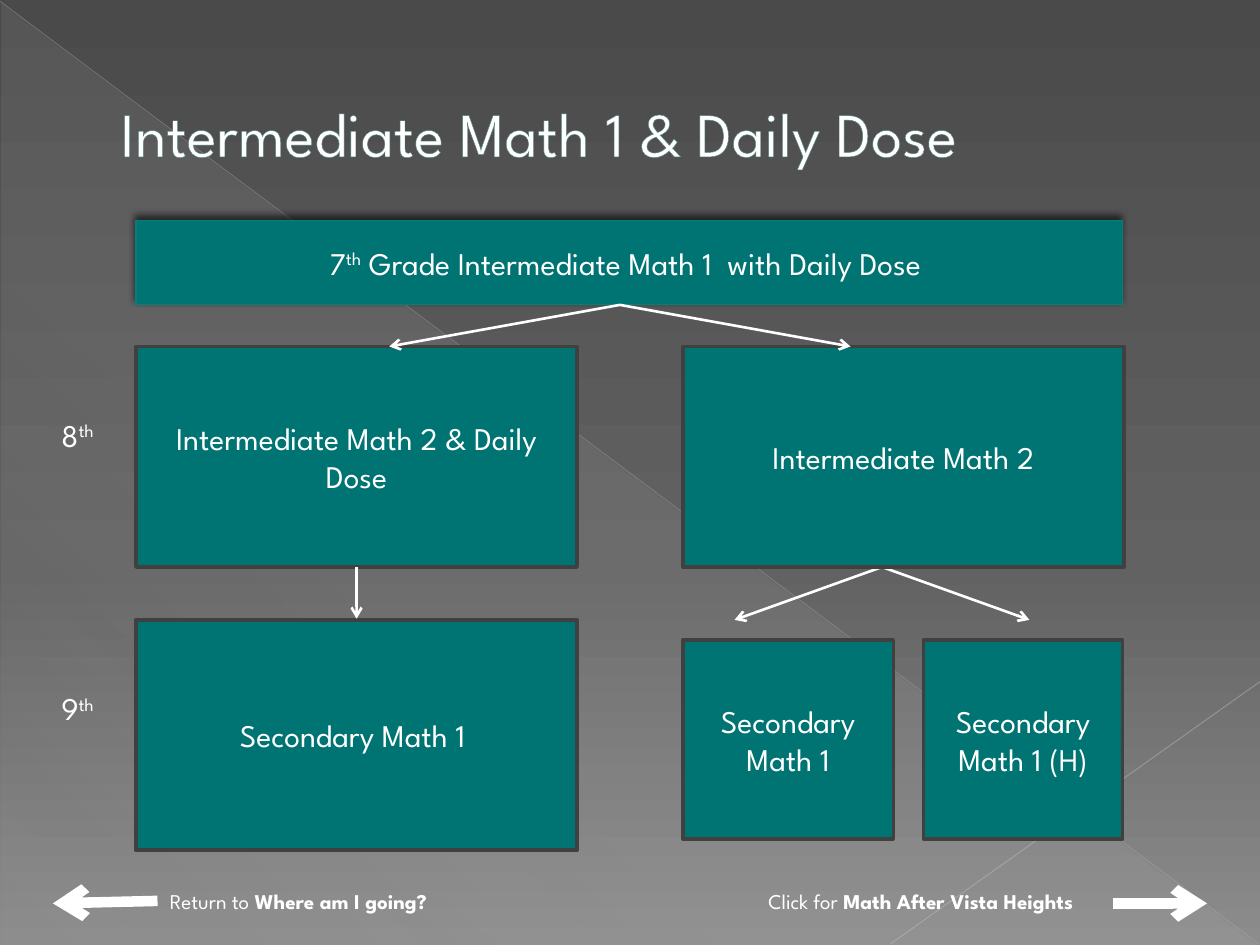
from lxml import etree
from pptx import Presentation
from pptx.dml.color import RGBColor
from pptx.enum.shapes import MSO_CONNECTOR, MSO_SHAPE
from pptx.enum.text import MSO_ANCHOR, MSO_AUTO_SIZE, PP_ALIGN
from pptx.oxml.ns import qn
from pptx.util import Inches, Pt

RECT = MSO_SHAPE.RECTANGLE
WEDGE = MSO_SHAPE.RIGHT_TRIANGLE
STRAIGHT = MSO_CONNECTOR.STRAIGHT
MIDDLE = MSO_ANCHOR.MIDDLE
GROW = MSO_AUTO_SIZE.SHAPE_TO_FIT_TEXT
LEFT, CENTER = PP_ALIGN.LEFT, PP_ALIGN.CENTER
FONT = "League Spartan"
WHITE, TEAL, GREY = "FFFFFF", "007373", "404040"
COL1, COL2, WIDE = 1.08, 5.42, 3.5
ROW8, ROW9 = 2.75, 5.08


def color(code):
    """Turn a hex string into a colour."""
    return RGBColor.from_string(code)


def child(parent, tag, **attrs):
    """Append a drawing element with the given attributes."""
    node = etree.SubElement(parent, qn(tag))
    for key, value in attrs.items():
        node.set(key, str(value))
    return node


def tint(parent, code, alpha):
    """Append a colour with its opacity in percent."""
    node = child(parent, "a:srgbClr", val=code)
    child(node, "a:alpha", val=alpha * 1000)


def blend(fill, root, stops, angle):
    """Give a fill a linear gradient of (place, colour, opacity) stops."""
    fill.gradient()
    grad = root.find(".//" + qn("a:gradFill"))
    items = grad.find(qn("a:gsLst"))
    for item in list(items):
        items.remove(item)
    for place, code, alpha in stops:
        tint(child(items, "a:gs", pos=place * 1000), code, alpha)
    grad.find(qn("a:lin")).set("ang", str(angle * 60000))


def write(shape, runs, size=18, align=CENTER):
    """Write one paragraph of (text, style) runs into a shape."""
    frame = shape.text_frame
    frame.word_wrap = True
    para = frame.paragraphs[0]
    para.alignment = align
    font = para.font
    font.name, font.size = FONT, Pt(size)
    font.color.rgb = color(WHITE)
    for text, style in runs:
        run = para.add_run()
        run.text = text
        if style == "bold":
            run.font.bold = True
        elif style == "super":
            run.font._element.set("baseline", "30000")
    return para


def box(slide, x, y, w, h, runs, edge=GREY, width=2):
    """Add a teal course box."""
    shape = slide.shapes.add_shape(RECT, Inches(x), Inches(y), Inches(w), Inches(h))
    shape.shadow.inherit = False
    shape.fill.solid()
    shape.fill.fore_color.rgb = color(TEAL)
    shape.line.color.rgb = color(edge)
    shape.line.width = Pt(width)
    shape.text_frame.vertical_anchor = MIDDLE
    write(shape, runs)
    return shape


def shade(shape):
    """Cast a soft shadow up and to the left."""
    effects = shape._element.spPr.find(qn("a:effectLst"))
    cast = child(effects, "a:outerShdw", blurRad=Pt(4), dist=Pt(3),
                 dir=245 * 60000, rotWithShape=0)
    tint(cast, "000000", 60)


def note(slide, x, y, w, h, runs, size=18, align=CENTER):
    """Add a text box that grows with its text."""
    shape = slide.shapes.add_textbox(Inches(x), Inches(y), Inches(w), Inches(h))
    write(shape, runs, size, align)
    shape.text_frame.auto_size = GROW


def line(slide, start, end, code=WHITE, width=1.5, alpha=100):
    """Add a straight line without a shadow."""
    x, y = start
    to_x, to_y = end
    link = slide.shapes.add_connector(
        STRAIGHT, Inches(x), Inches(y), Inches(to_x), Inches(to_y))
    link.line.color.rgb = color(code)
    link.line.width = Pt(width)
    props = link._element.spPr
    if alpha < 100:
        tone = props.find(".//" + qn("a:srgbClr"))
        child(tone, "a:alpha", val=alpha * 1000)
    child(props, "a:effectLst")
    return link


def arrow(slide, start, end, width=1.5):
    """Add a white line with an open arrowhead at its end."""
    link = line(slide, start, end, width=width)
    child(link._element.spPr.find(qn("a:ln")), "a:tailEnd", type="arrow")


def fork(slide, x, y, reach, drop):
    """Add two arrows that part from one point."""
    for side in (-1, 1):
        arrow(slide, (x, y), (x + side * reach, y + drop))


def scene(slide):
    """Paint the grey backdrop with its wedge and thin rays."""
    blend(slide.background.fill, slide._element,
          [(0, "4A4A4A", 100), (60, "626262", 100), (100, "8C8C8C", 100)], 90)
    wedge = slide.shapes.add_shape(
        WEDGE, Inches(0.01), Inches(0.02), Inches(9.98), Inches(7.48))
    wedge.shadow.inherit = False
    wedge.line.fill.background()
    blend(wedge.fill, wedge._element,
          [(0, "D2D2D2", 10), (70, "D2D2D2", 8), (100, "D2D2D2", 1)], 133)
    line(slide, (0, 0.01), (9.99, 7.49), "BFBFBF", 0.39, 35)
    line(slide, (10, 5.41), (7.07, 7.49), "C6C6C6", 0.47, 45)


def title(slide, text):
    """Add the outlined slide title."""
    shape = slide.shapes.add_textbox(
        Inches(0.33), Inches(0.67), Inches(9.33), Inches(0.83))
    shape.text_frame.vertical_anchor = MIDDLE
    para = write(shape, [(text, "")], 35.7, LEFT)
    para.line_spacing = 0.9
    para._p.pPr.set("marL", str(Inches(0.53)))
    edge = etree.Element(qn("a:ln"), w=str(Pt(0.5)))
    tint(child(edge, "a:solidFill"), "528681", 100)
    para.font._element.insert(0, edge)


def main():
    """Build the course pathway slide."""
    deck = Presentation()
    deck.slide_width, deck.slide_height = Inches(10), Inches(7.5)
    slide = deck.slides.add_slide(deck.slide_layouts[6])
    scene(slide)
    title(slide, "Intermediate Math 1 & Daily Dose")

    fork(slide, 7, 4.5, 1.17, 0.42)
    top = box(slide, COL1, 1.75, 7.83, 0.67,
              [("7", ""), ("th", "super"),
               (" Grade Intermediate Math 1  with Daily Dose ", "")], "087E7B", 0.75)
    shade(top)
    for x, y, w, h, text, width in (
            (COL1, ROW8, WIDE, 1.75, "Intermediate Math 2 & Daily Dose", 2),
            (COL2, ROW8, WIDE, 1.75, "Intermediate Math 2", 2),
            (COL1, 4.92, WIDE, 1.83, "Secondary Math 1 ", 2.25),
            (COL2, ROW9, 1.67, 1.58, "Secondary Math 1", 2),
            (7.33, ROW9, 1.58, 1.58, "Secondary Math 1 (H)", 2)):
        box(slide, x, y, w, h, [(text, "")], width=width)
    fork(slide, 4.92, 2.42, 1.83, 0.33)
    arrow(slide, (2.83, 4.5), (2.83, 4.91))

    for y, grade in ((3.25, " 8"), (5.42, " 9")):
        note(slide, 0.25, y, 0.67, 0.4, [(grade, ""), ("th", "super")])

    arrow(slide, (1.25, 7.15), (0.42, 7.17), 6)
    arrow(slide, (8.83, 7.17), (9.58, 7.17), 6)
    for x, w, lead, goal in (
            (1.25, 2.92, "Return to ", "Where am I going?"),
            (6, 3.08, "Click for ", "Math After Vista Heights")):
        note(slide, x, 7, w, 0.3, [(lead, ""), (goal, "bold")], 12, LEFT)
    deck.save("out.pptx")


if __name__ == "__main__":
    main()
